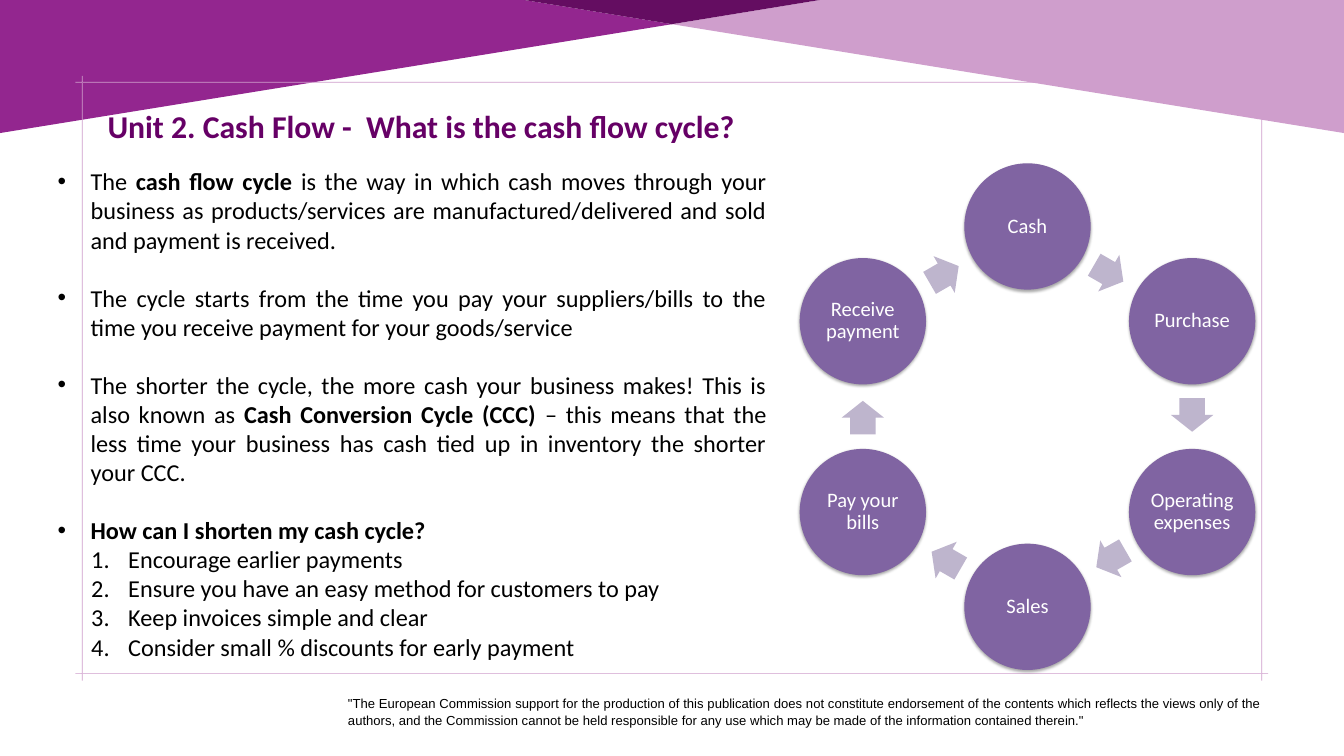
from math import cos, radians, sin

from lxml.etree import SubElement
from pptx import Presentation
from pptx.dml.color import RGBColor
from pptx.enum.shapes import MSO_SHAPE
from pptx.enum.text import MSO_ANCHOR, PP_ALIGN
from pptx.oxml.ns import qn
from pptx.util import Pt

PX = 9144  # EMU per px, 100 px to the inch
COLORS = {
    "purple": "93268F", "pink": "CF9ECC", "plum": "640D61", "title": "660066",
    "circle": "8064A2", "arrow": "BEB5CD", "black": "000000", "white": "FFFFFF",
}


def paint(sp, color):
    sp.shadow.inherit = False
    sp.fill.solid()
    sp.fill.fore_color.rgb = RGBColor.from_string(COLORS[color])
    sp.line.fill.background()


def add_run(p, text, size, color, font="Calibri", bold=False):
    r = p.add_run()
    r.text = text
    r.font.name = font
    r.font.size = Pt(size)
    r.font.bold = bold
    r.font.color.rgb = RGBColor.from_string(COLORS[color])


prs = Presentation()
prs.slide_width, prs.slide_height = 2000 * PX, 1125 * PX
s = prs.slides.add_slide(prs.slide_layouts[5])

# Header bands
bands = [
    ("purple", [(0, 198), (0, 0), (780, 0), (1000, 36)]),
    ("pink", [(2000, 198), (1000, 36), (1220, 0), (2000, 0)]),
    ("plum", [(1000, 36), (780, 0), (1220, 0)]),
]
for color, points in bands:
    fb = s.shapes.build_freeform(*points[0], scale=PX)
    fb.add_line_segments(points[1:])
    paint(fb.convert_to_shape(), color)

# Hairline frame with crossing corners
hairlines = [(112, 122, 1775, 1), (112, 1002, 1775, 1),
             (122, 113, 1, 900), (1877, 113, 1, 900)]
fb = s.shapes.build_freeform(112, 122, scale=PX)
for i, (x, y, w, h) in enumerate(hairlines):
    if i:
        fb.move_to(x, y)
    fb.add_line_segments([(x + w, y), (x + w, y + h), (x, y + h)])
paint(fb.convert_to_shape(), "pink")

# Disclaimer
tf = s.shapes.add_textbox(508 * PX, 1029 * PX, 1379 * PX, 52 * PX).text_frame
tf.word_wrap = True
p = tf.paragraphs[0]
p.alignment = PP_ALIGN.JUSTIFY
p.line_spacing = 1.07
add_run(p, '"The European Commission support for the production of this publication '
        'does not constitute endorsement of the contents which reflects the views only '
        'of the authors, and the Commission cannot be held responsible for any use '
        'which may be made of the information contained therein."', 14, "black", "Arial")

# Title, in front of the bands
title = s.shapes.title
s.shapes._spTree.append(title._element)
title.left, title.top, title.width, title.height = 150 * PX, 154 * PX, 1271 * PX, 67 * PX
tf = title.text_frame
tf.vertical_anchor = MSO_ANCHOR.TOP
p = tf.paragraphs[0]
p.alignment = PP_ALIGN.LEFT
add_run(p, "Unit 2. Cash Flow -  What is the cash flow cycle?", 34, "title", bold=True)

# Body: (numbered, [(text, bold), ...])
body = [
    (False, [("The ", False), ("cash flow cycle", True),
             (" is the way in which cash moves through your business as products/services "
              "are manufactured/delivered and sold and payment is received.", False)]),
    (False, [("The cycle starts from the time you pay your suppliers/bills to the time you "
              "receive payment for your goods/service", False)]),
    (False, [("The shorter the cycle, the more cash your business makes! This is also "
              "known as ", False), ("Cash Conversion Cycle (CCC) ", True),
             ("– this means that the less time your business has cash tied up in "
              "inventory the shorter your CCC. ", False)]),
    (False, [("How can I shorten my cash cycle?", True)]),
    (True, [("Encourage earlier payments", False)]),
    (True, [("Ensure you have an easy method for customers to pay", False)]),
    (True, [("Keep invoices simple and clear", False)]),
    (True, [("Consider small % discounts for early payment", False)]),
]
tf = s.shapes.add_textbox(75 * PX, 243 * PX, 1076 * PX, 798 * PX).text_frame
tf.word_wrap = True
for i, (numbered, runs) in enumerate(body):
    p = tf.add_paragraph() if i else tf.paragraphs[0]
    pPr = p._p.get_or_add_pPr()
    margin, indent = (106, -55) if numbered else (50, -49)
    pPr.set("marL", str(margin * PX))
    pPr.set("indent", str(indent * PX))
    clr = SubElement(pPr, qn("a:buClr"))
    SubElement(clr, qn("a:srgbClr"), val=COLORS["black"])
    SubElement(pPr, qn("a:buFont"), typeface="Calibri" if numbered else "Arial")
    if numbered:
        p.level = 1
        SubElement(pPr, qn("a:buAutoNum"), type="arabicPeriod")
    else:
        SubElement(pPr, qn("a:buChar"), char="•")
    p.alignment = PP_ALIGN.JUSTIFY
    if i and not numbered:
        p.space_before = Pt(31)
    for text, bold in runs:
        add_run(p, text, 26, "black", bold=bold)

# Cycle: circles on a ring, an arrow halfway to the next one
steps = ["Cash", "Purchase", "Operating expenses", "Sales", "Pay your bills",
         "Receive payment"]
CX, CY, RADIUS, DIAM = 1529, 620, 283, 188
ARROW_W, ARROW_H, SETBACK = 50, 63, 2
for i, step in enumerate(steps):
    a = radians(60 * i)
    x = round(CX + RADIUS * sin(a) - DIAM / 2)
    y = round(CY - RADIUS * cos(a) - DIAM / 2)
    sp = s.shapes.add_shape(MSO_SHAPE.OVAL, x * PX, y * PX, DIAM * PX, DIAM * PX)
    paint(sp, "circle")
    effects = sp._element.spPr.find(qn("a:effectLst"))
    shadow = SubElement(effects, qn("a:outerShdw"), blurRad="40000", dist="23000",
                        dir="5400000", rotWithShape="0")
    clr = SubElement(shadow, qn("a:srgbClr"), val=COLORS["black"])
    SubElement(clr, qn("a:alpha"), val="35000")
    tf = sp.text_frame
    tf.word_wrap = True
    tf.vertical_anchor = MSO_ANCHOR.MIDDLE
    tf.margin_left = tf.margin_right = tf.margin_top = tf.margin_bottom = 3 * PX
    p = tf.paragraphs[0]
    p.alignment = PP_ALIGN.CENTER
    p.line_spacing = 0.9
    add_run(p, step, 22, "white")

    turn = 60 * i + 30
    a = radians(turn)
    mid = RADIUS * cos(radians(30))
    x = round(CX + mid * sin(a) - SETBACK * cos(a) - ARROW_W / 2)
    y = round(CY - mid * cos(a) - SETBACK * sin(a) - ARROW_H / 2)
    sp = s.shapes.add_shape(MSO_SHAPE.RIGHT_ARROW, x * PX, y * PX, ARROW_W * PX, ARROW_H * PX)
    sp.adjustments[0], sp.adjustments[1] = 0.6, 0.5
    sp.rotation = turn
    paint(sp, "arrow")

prs.save("out.pptx")
